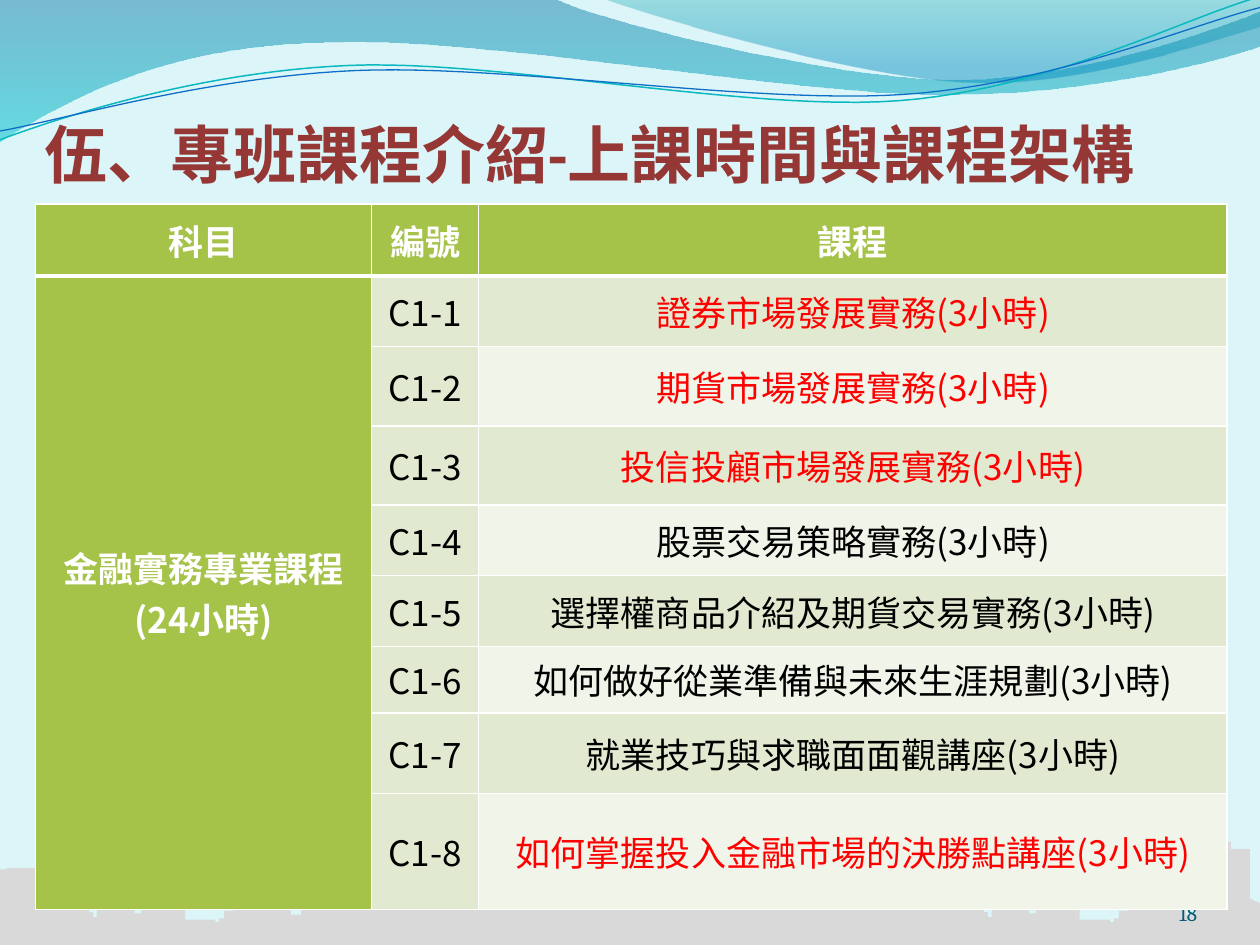
from lxml.etree import SubElement
from pptx import Presentation
from pptx.dml.color import RGBColor
from pptx.enum.text import MSO_ANCHOR, PP_ALIGN
from pptx.oxml.ns import qn
from pptx.util import Inches, Pt

UNIT = Inches(1)
COLUMNS, ROWS = 10, 7.5
CURVE_STEPS = 24
BODY_FONT = "Noto Sans CJK SC"

WHITE = RGBColor(0xFF, 0xFF, 0xFF)
BLACK = RGBColor(0, 0, 0)
RED = RGBColor(0xFF, 0, 0)
MAROON = RGBColor(0x95, 0x37, 0x35)
PALE_BLUE = RGBColor(0xDB, 0xF5, 0xF9)
NAVY = RGBColor(0x04, 0x5D, 0x75)
GREEN = RGBColor(0xA5, 0xC2, 0x49)
BANDS = RGBColor(0xE1, 0xE9, 0xD0), RGBColor(0xF0, 0xF4, 0xE9)
GREY = RGBColor(0xD9, 0xD9, 0xD9)
TEAL = RGBColor(0x0A, 0xB8, 0xBF)
BLUE = RGBColor(0x0F, 0x6F, 0xC6)
WAVE_STOPS = (0, RGBColor(0, 0x74, 0xA1), 45), (1, RGBColor(0, 0xC6, 0xCF), 55)
CREST_STOPS = (0, RGBColor(0, 0xA1, 0xA9), 30), (0.8, RGBColor(0, 0x8B, 0xBF), 45)

WAVE_TOP = [(4.4, -0.01), (4.76, 0.17), (6.64, 0.63), (7.58, 0.63),
            (8.53, 0.63), (9.58, 0.26), (10, 0.09)]
WAVE_BOTTOM = [(10.01, 0.36), (9.83, 0.44), (8.7, 0.76), (7.46, 0.75),
               (6.22, 0.75), (3.82, 0.28), (2.57, 0.34),
               (1.29, 0.35), (0.46, 0.83), (-0.01, 1.13)]
CREST = [(4.79, -0.01), (5.09, 0.11), (6.82, 0.62), (7.69, 0.65),
         (8.56, 0.69), (9.61, 0.32), (10, 0.21)]
TEAL_LINE = [(0, 1.11), (0.48, 0.93), (1.58, 0.57), (2.77, 0.52), (3.95, 0.47),
             (5.93, 0.89), (7.13, 0.8), (8.33, 0.71), (9.38, 0.15), (9.98, -0.02)]
BLUE_LINE = [(0, 1.04), (0.47, 0.96), (1.64, 0.61), (2.83, 0.56), (4.03, 0.51),
             (5.97, 0.83), (7.17, 0.75), (8.36, 0.67), (9.41, 0.21), (10, 0.06)]

BLOCK_SHIFT = 7.1
BLOCK_ROOFS = [
    (0.01, 6.9), (0.05, 6.89), (0.44, 7.13), (0.48, 7.05), (0.51, 6.97), (0.62, 7.04),
    (0.64, 7.19), (0.71, 7.24), (0.74, 7.28), (0.77, 7.17), (0.89, 7.15), (0.92, 7.17),
    (1.07, 7.25), (1.12, 7.12), (1.26, 7.07), (1.34, 7.13), (1.4, 7.11), (1.47, 7.3),
    (1.71, 7.32), (1.74, 7.29), (1.78, 7.23), (1.85, 7.17), (1.89, 6.91), (1.97, 6.75),
    (2.13, 6.81), (2.21, 7.18), (2.31, 7.26), (2.39, 7.09), (2.4, 7.03), (2.42, 6.93),
    (2.45, 6.76), (2.46, 6.6), (2.52, 6.58), (2.61, 6.68), (2.67, 6.74), (2.82, 7.13)]
CENTRE_ROOFS = [
    (2.85, 6.91), (3.03, 6.68), (3.2, 6.71), (3.44, 6.93), (3.84, 7.02), (3.98, 6.8),
    (4.09, 6.52), (4.29, 6.79), (4.34, 6.98), (4.46, 6.17), (4.47, 6.06), (4.62, 6.03),
    (4.7, 6.07), (4.78, 6.12), (4.94, 6.21), (4.98, 7.1), (5.14, 7.21), (5.17, 7.14),
    (5.35, 7.13), (5.58, 6.87), (5.9, 6.15), (6.37, 6.84), (6.44, 6.87), (6.82, 6.53),
    (6.86, 6.48), (7.02, 6.53), (7.05, 6.95)]

SUBJECT = "金融實務專業課程\n(24小時)"
COURSES = [
    ("證券市場發展實務", RED), ("期貨市場發展實務", RED), ("投信投顧市場發展實務", RED),
    ("股票交易策略實務", BLACK), ("選擇權商品介紹及期貨交易實務", BLACK),
    ("如何做好從業準備與未來生涯規劃", BLACK), ("就業技巧與求職面面觀講座", BLACK),
    ("如何掌握投入金融市場的決勝點講座", RED)]
COLUMN_WIDTHS = [2.67, 0.85, 5.94]
ROW_HEIGHTS = [0.57, 0.56, 0.63, 0.63, 0.56, 0.56, 0.53, 0.64, 0.92]


def grid(*cells):
    return [round(cell * UNIT) for cell in cells]


def curve(points):
    traced = [points[0]]
    for start in range(0, len(points) - 1, 3):
        a, b, c, d = points[start:start + 4]
        for step in range(1, CURVE_STEPS + 1):
            t = step / CURVE_STEPS
            u = 1 - t
            weights = u ** 3, 3 * u * u * t, 3 * u * t * t, t ** 3
            traced.append(tuple(sum(w * p[axis] for w, p in zip(weights, (a, b, c, d)))
                                for axis in (0, 1)))
    return traced


def skyline():
    shifted = [(x + BLOCK_SHIFT, y) for x, y in BLOCK_ROOFS]
    outline = [(0, ROWS), (0, 6.9)]
    for x, roof in BLOCK_ROOFS + CENTRE_ROOFS + shifted:
        outline += [(x, outline[-1][1]), (x, roof)]
    return outline + [(COLUMNS, 7.17), (COLUMNS, ROWS)]


def add_outline(page, points, closed=True):
    cells = [grid(*point) for point in points]
    builder = page.shapes.build_freeform(*cells[0], scale=1.0)
    builder.add_line_segments(cells[1:], close=closed)
    shape = builder.convert_to_shape()
    shape.shadow.inherit = False
    return shape


def add_area(page, points, color):
    shape = add_outline(page, points)
    shape.line.fill.background()
    shape.fill.solid()
    shape.fill.fore_color.rgb = color


def add_gradient_area(page, points, stops):
    shape = add_outline(page, points)
    shape.line.fill.background()
    shape.fill.gradient()
    shape.fill.gradient_angle = 270
    for stop, (position, color, opacity) in zip(shape.fill.gradient_stops, stops):
        stop.position = position
        stop.color.rgb = color
    tints = shape._element.spPr.iter(qn("a:srgbClr"))
    for tint, (_, _, opacity) in zip(tints, stops):
        SubElement(tint, qn("a:alpha"), val=str(opacity * 1000))


def add_curve(page, points, color, width):
    shape = add_outline(page, curve(points), closed=False)
    shape.fill.background()
    shape.line.color.rgb = color
    shape.line.width = Pt(width)


def write(frame, text, size, color, align, font=BODY_FONT, bold=False):
    frame.text = text
    for para in frame.paragraphs:
        para.alignment = align
        para.font.size = Pt(size)
        para.font.bold = bold
        para.font.name = font
        para.font.color.rgb = color
        SubElement(para._p.pPr.find(qn("a:defRPr")), qn("a:ea"), typeface=BODY_FONT)


def add_text(page, place, text, size, color, align, font, bold=False, bottom=0):
    frame = page.shapes.add_textbox(*grid(*place)).text_frame
    frame.word_wrap = True
    frame.vertical_anchor = MSO_ANCHOR.BOTTOM
    frame.margin_left = frame.margin_right = frame.margin_bottom = 0
    frame.margin_top = Inches(bottom)
    write(frame, text, size, color, align, font, bold)


def set_borders(cell, widths):
    properties = cell._tc.get_or_add_tcPr()
    for side, width in zip("LRTB", widths):
        line = SubElement(properties, qn(f"a:ln{side}"), w=str(Pt(width)))
        SubElement(SubElement(line, qn("a:solidFill")), qn("a:srgbClr"), val=str(WHITE))


def fill_cell(cell, text, fill, color, bold=False):
    cell.margin_left = cell.margin_right = Inches(0.07)
    cell.margin_top = cell.margin_bottom = 0
    cell.vertical_anchor = MSO_ANCHOR.MIDDLE
    cell.fill.solid()
    cell.fill.fore_color.rgb = fill
    write(cell.text_frame, text, 20, color, PP_ALIGN.CENTER, bold=bold)


def add_course_table(page):
    place = grid(0.28, 1.62, sum(COLUMN_WIDTHS), sum(ROW_HEIGHTS))
    table = page.shapes.add_table(len(ROW_HEIGHTS), len(COLUMN_WIDTHS), *place).table
    for column, width in zip(table.columns, grid(*COLUMN_WIDTHS)):
        column.width = width
    for row, height in zip(table.rows, grid(*ROW_HEIGHTS)):
        row.height = height
    for index, row in enumerate(table.rows):
        for cell in row.cells:
            set_borders(cell, (1, 1, 3 if index == 1 else 1, 3 if index == 0 else 1))
    for column, heading in enumerate(["科目", "編號", "課程"]):
        fill_cell(table.cell(0, column), heading, GREEN, WHITE, bold=True)
    table.cell(1, 0).merge(table.cell(len(COURSES), 0))
    fill_cell(table.cell(1, 0), SUBJECT, GREEN, WHITE, bold=True)
    for number, (course, color) in enumerate(COURSES, 1):
        fill_cell(table.cell(number, 1), f"C1-{number}", BANDS[0], BLACK)
        fill_cell(table.cell(number, 2), f"{course}(3小時)", BANDS[(number - 1) % 2], color)


def main():
    deck = Presentation()
    deck.slide_width, deck.slide_height = grid(COLUMNS, ROWS)
    page = deck.slides.add_slide(deck.slide_layouts[6])
    page.background.fill.solid()
    page.background.fill.fore_color.rgb = PALE_BLUE
    add_gradient_area(page, [(0, -0.01)] + curve(WAVE_TOP) + curve(WAVE_BOTTOM), WAVE_STOPS)
    add_gradient_area(page, curve(CREST) + [(COLUMNS, 0)], CREST_STOPS)
    add_curve(page, TEAL_LINE, TEAL, 0.85)
    add_curve(page, BLUE_LINE, BLUE, 0.75)
    add_area(page, skyline(), GREY)
    add_text(page, (8.67, 6.95, 0.83, 0.4), "18", 12, NAVY, PP_ALIGN.RIGHT, "Cambria")
    add_course_table(page)
    add_text(page, (0.35, 0.52, 8.91, 1), "伍、專班課程介紹-上課時間與課程架構",
             36, MAROON, PP_ALIGN.LEFT, "Calibri", bold=True, bottom=0.05)
    deck.save("out.pptx")


if __name__ == "__main__":
    main()
